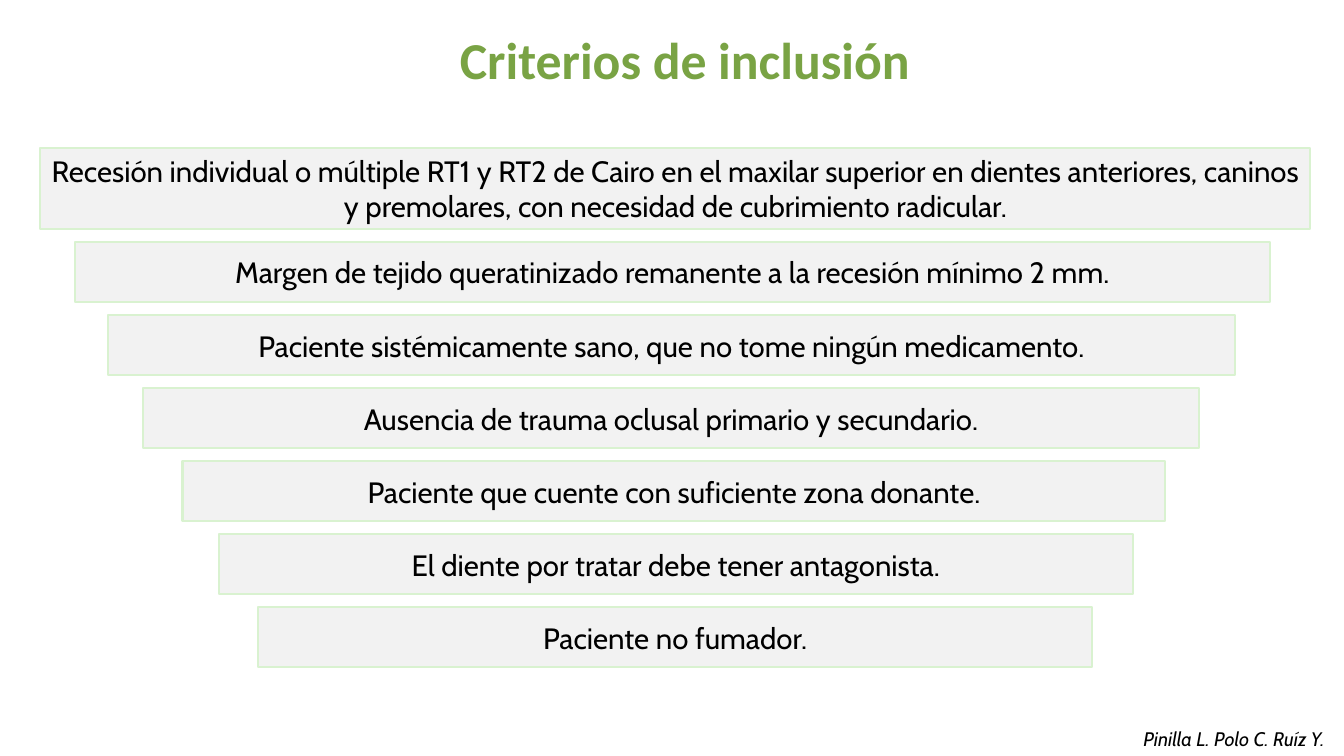
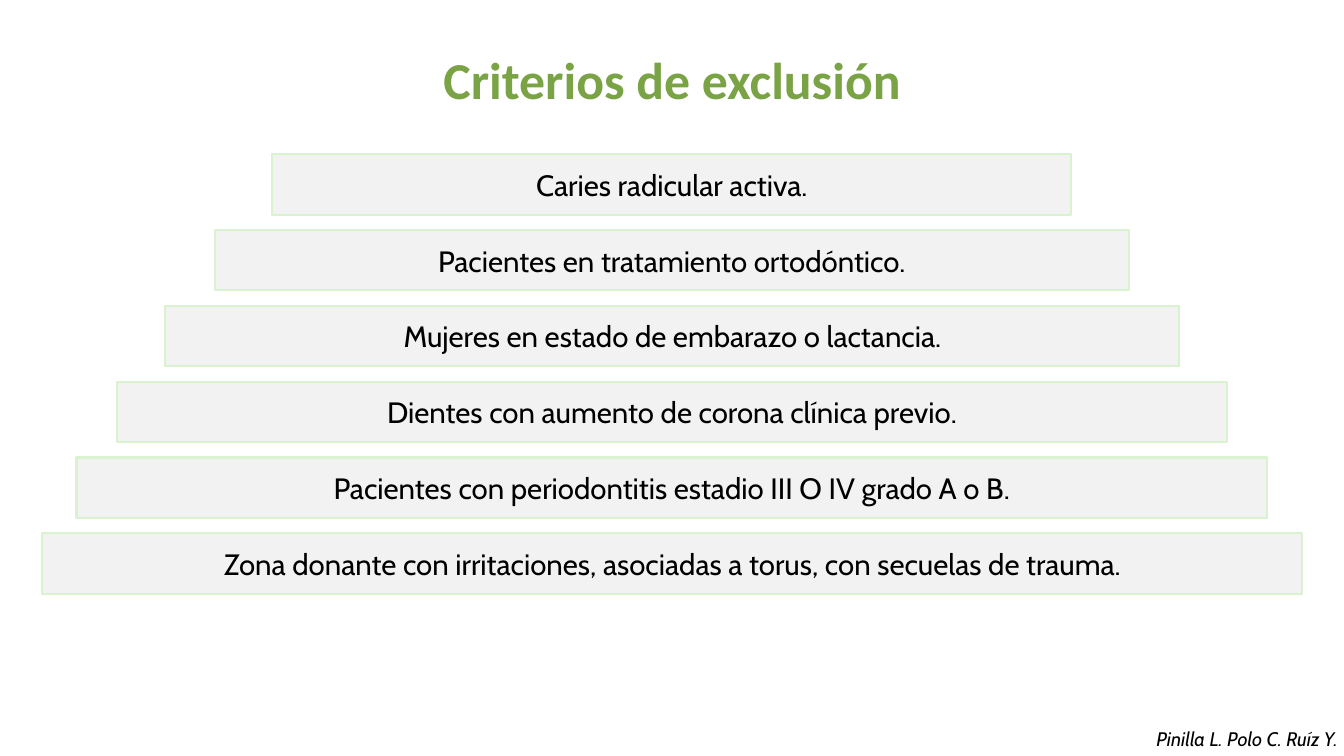
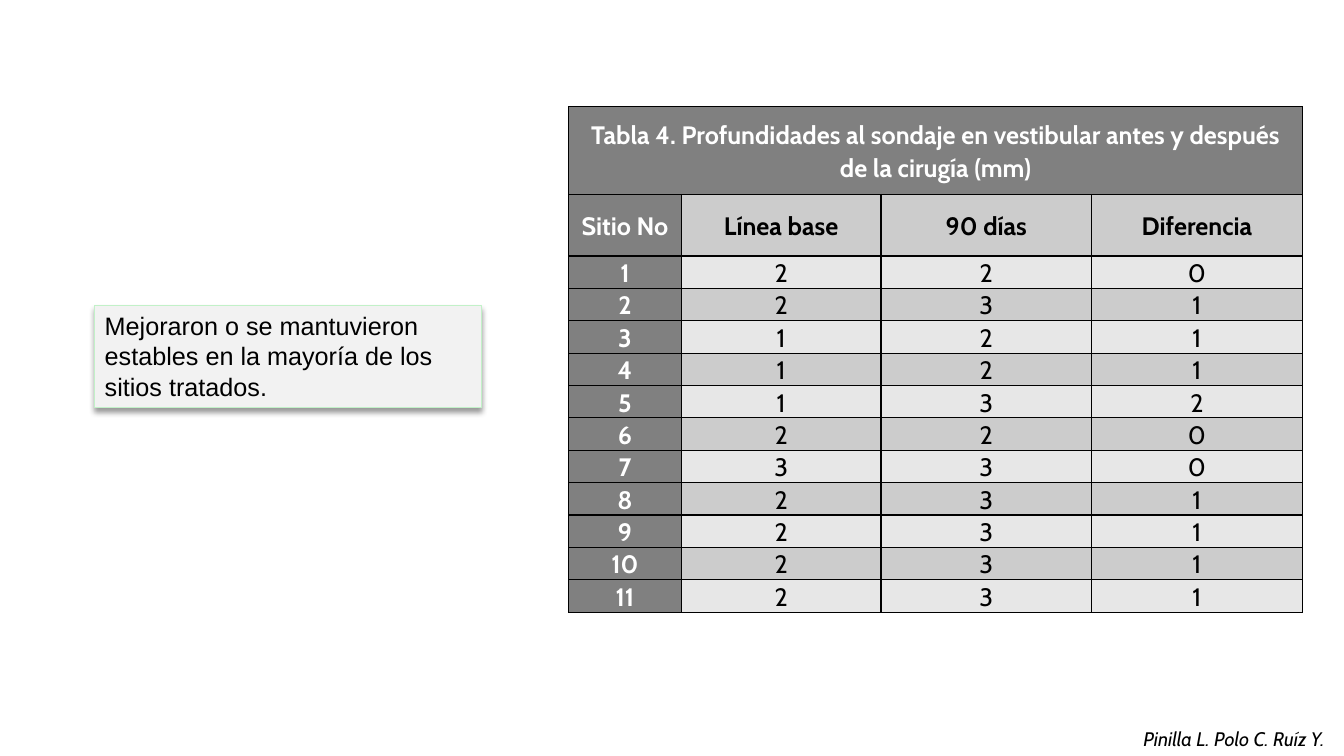
"""Builds three slides with the study criteria and the probing depth results."""
from lxml import etree
from pptx import Presentation
from pptx.dml.color import RGBColor
from pptx.enum.shapes import MSO_SHAPE
from pptx.enum.text import MSO_ANCHOR as Anchor, MSO_AUTO_SIZE as AutoSize, PP_ALIGN as Align
from pptx.oxml import parse_xml
from pptx.oxml.ns import nsdecls, qn
from pptx.util import Cm, Pt

BLACK = RGBColor(0x00, 0x00, 0x00)
WHITE = RGBColor(0xFF, 0xFF, 0xFF)
TITLE_GREEN = RGBColor(0x79, 0xA3, 0x44)
BAR_LINE = RGBColor(0xD9, 0xF2, 0xD0)
NOTE_LINE = RGBColor(0xC2, 0xF1, 0xC8)
PALE_GRAY = RGBColor(0xF2, 0xF2, 0xF2)
DARK_GRAY = RGBColor(0x80, 0x80, 0x80)
MID_GRAY = RGBColor(0xCC, 0xCC, 0xCC)
LIGHT_GRAY = RGBColor(0xE7, 0xE7, 0xE7)

FOOTER = "Pinilla L. Polo C. Ruíz Y."
BAR_HEIGHT = 1.52

INCLUSION = [
    (1.02, 32, "Recesión individual o múltiple RT1 y RT2 de Cairo en el maxilar superior en dientes "
     "anteriores, caninos y premolares, con necesidad de cubrimiento radicular."),
    (1.88, 30.12, "Margen de tejido queratinizado remanente a la recesión mínimo 2 mm."),
    (2.72, 28.4, "Paciente sistémicamente sano, que no tome ningún medicamento."),
    (3.61, 26.6, "Ausencia de trauma oclusal primario y secundario."),
    (4.6, 24.77, "Paciente que cuente con suficiente zona donante."),
    (5.51, 23.04, "El diente por tratar debe tener antagonista."),
    (6.5, 21.03, "Paciente no fumador."),
]
EXCLUSION = [
    (6.86, 20.14, "Caries radicular activa."),
    (5.41, 23.04, "Pacientes en tratamiento ortodóntico."),
    (4.17, 25.55, "Mujeres en estado de embarazo o lactancia."),
    (2.95, 27.97, "Dientes con aumento de corona clínica previo."),
    (1.93, 30, "Pacientes con periodontitis estadio III O IV grado A o B."),
    (1.07, 31.75, "Zona donante con irritaciones, asociadas a torus, con secuelas de trauma."),
]
CRITERIA = [
    ("Criterios de inclusión", 9.07, 0.58, 16.38, 4.26, 1.84, INCLUSION),
    ("Criterios de exclusión", 8.81, 1.09, 16.26, 3.89, 1.91, EXCLUSION),
]
DEPTHS = [(2, 2), (2, 3), (1, 2), (1, 2), (1, 3), (2, 2), (3, 3), (2, 3), (2, 3), (2, 3), (2, 3)]


def write(frame, text, size, font="Cabin", color=BLACK, align=Align.CENTER, bold=False, italic=False):
    """Sets one formatted paragraph in a text frame."""
    frame.text = text
    frame.word_wrap = True
    paragraph = frame.paragraphs[0]
    paragraph.alignment = align
    for span in paragraph.runs:
        span.font.size = Pt(size)
        span.font.name = font
        span.font.color.rgb = color
        span.font.bold = bold
        span.font.italic = italic


def add_panel(page, left, top, width, height, line, weight, fill=None):
    """Adds a flat rectangle with an optional fill."""
    panel = page.shapes.add_shape(MSO_SHAPE.RECTANGLE, Cm(left), Cm(top), Cm(width), Cm(height))
    panel.shadow.inherit = False
    panel.line.color.rgb = line
    panel.line.width = Pt(weight)
    if fill is None:
        panel.fill.background()
    else:
        panel.fill.solid()
        panel.fill.fore_color.rgb = fill
    return panel


deck = Presentation()
deck.slide_width = Cm(33.87)
deck.slide_height = Cm(19.05)

pages = []
for footer_left in (22.63, 22.96, 22.63):
    page = deck.slides.add_slide(deck.slide_layouts[6])
    footer = page.shapes.add_textbox(Cm(footer_left), Cm(18.19), Cm(16.94), Cm(0.86))
    write(footer.text_frame, FOOTER, 14, italic=True)
    pages.append(page)

for page, (heading, left, top, width, first_top, pitch, bars) in zip(pages, CRITERIA):
    title = add_panel(page, left, top, width, 1.83, WHITE, 0.75)
    write(title.text_frame, heading, 37, "Calibri", TITLE_GREEN, bold=True)
    title.text_frame.vertical_anchor = Anchor.TOP
    title.text_frame.auto_size = AutoSize.SHAPE_TO_FIT_TEXT
    for index, (bar_left, bar_width, text) in enumerate(bars):
        extra = 0.54 if len(text) > 100 else 0
        bar = add_panel(page, bar_left, first_top + index * pitch - extra, bar_width,
                        BAR_HEIGHT + extra, BAR_LINE, 1.5, PALE_GRAY)
        write(bar.text_frame, text, 21)
        bar.text_frame.vertical_anchor = Anchor.MIDDLE

page = pages[2]
rows = [
    ["Tabla 4. Profundidades al sondaje en vestibular antes y después de la cirugía (mm)", "", "", ""],
    ["Sitio No", "Línea base", "90 días", "Diferencia"],
]
for site, (baseline, later) in enumerate(DEPTHS, 1):
    rows.append([str(site), str(baseline), str(later), str(later - baseline)])

table = page.shapes.add_table(len(rows), 4, Cm(14.33), Cm(2.69), Cm(18.49), Cm(12.6)).table
table.horz_banding = False
for column, width in zip(table.columns, (2.84, 5.03, 5.31, 5.31)):
    column.width = Cm(width)
for row, values in enumerate(rows):
    table.rows[row].height = Cm((2.21, 1.55)[row] if row < 2 else 0.81)
    for column, value in enumerate(values):
        cell = table.cell(row, column)
        dark = row == 0 or column == 0
        write(cell.text_frame, value, 18, color=WHITE if dark else BLACK, bold=dark or row == 1)
        cell.text_frame.paragraphs[0].line_spacing = 1.07
        cell.text_frame.paragraphs[0].space_after = Pt(8)
        cell.margin_left = cell.margin_right = Cm(0.18)
        cell.margin_top = cell.margin_bottom = 0
        cell.vertical_anchor = Anchor.MIDDLE if row < 2 else Anchor.TOP
        properties = cell._tc.get_or_add_tcPr()
        for side in ("lnL", "lnR", "lnT", "lnB"):
            border = etree.SubElement(properties, qn(f"a:{side}"), w=str(Pt(1)))
            paint = etree.SubElement(border, qn("a:solidFill"))
            etree.SubElement(paint, qn("a:srgbClr"), val=str(BLACK))
        cell.fill.solid()
        cell.fill.fore_color.rgb = DARK_GRAY if dark else LIGHT_GRAY if row % 2 == 0 else MID_GRAY
table.cell(0, 0).merge(table.cell(0, 3))

note = add_panel(page, 2.39, 7.7, 9.75, 2.57, NOTE_LINE, 0.75, PALE_GRAY)
write(note.text_frame, "Mejoraron o se mantuvieron estables en la mayoría de los sitios tratados.",
      18, "Arial", align=Align.LEFT)
note.text_frame.vertical_anchor = Anchor.TOP
note.text_frame.auto_size = AutoSize.SHAPE_TO_FIT_TEXT
note._element.spPr.find(qn("a:effectLst")).append(parse_xml(
    f'<a:outerShdw {nsdecls("a")} blurRad="{Pt(4)}" dist="{Pt(3)}" dir="5400000" rotWithShape="0">'
    f'<a:srgbClr val="{BLACK}"><a:alpha val="40000"/></a:srgbClr></a:outerShdw>'))

deck.save("out.pptx")
